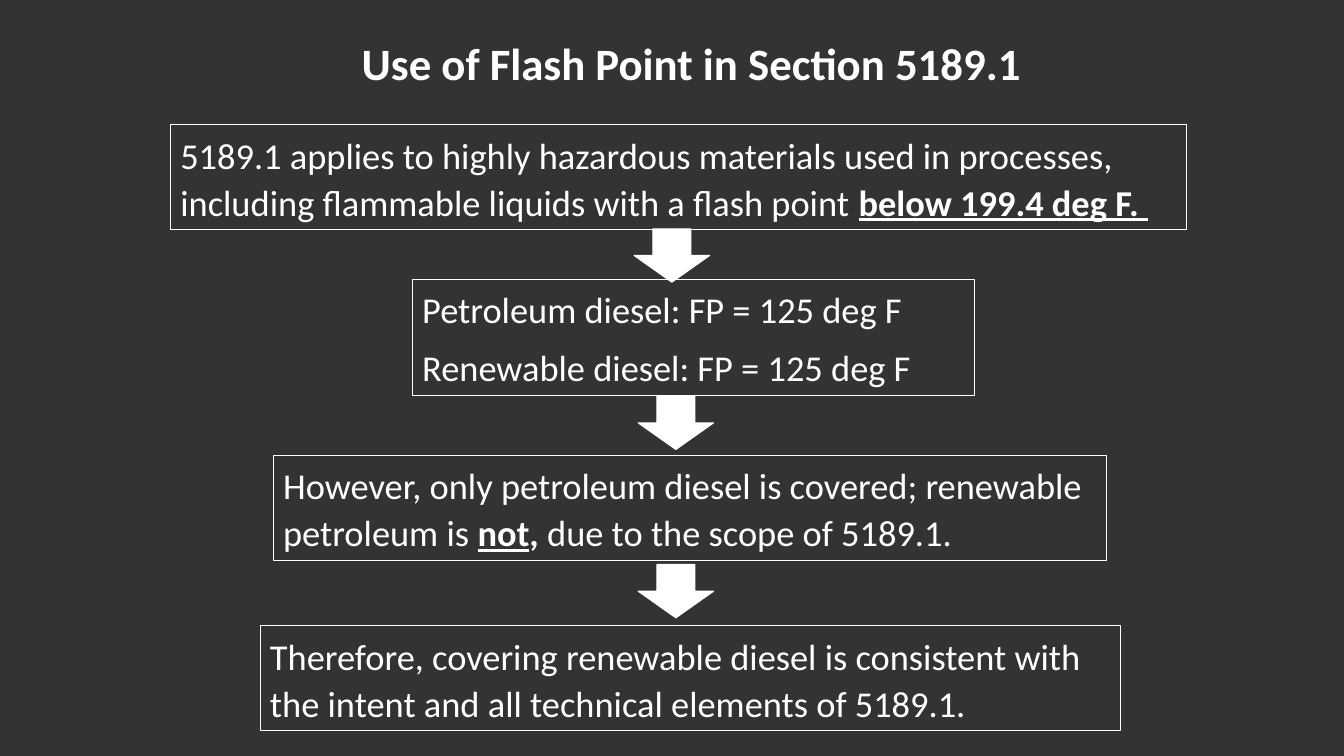
from pptx import Presentation
from pptx import util as u
from pptx.dml.color import RGBColor
from pptx.enum import shapes, text

COLS, ROWS = 160, 90
PLAIN, BOLD, KEY = (False, False), (True, False), (True, True)  # (bold, underline)


def rgb(value):
    return RGBColor.from_string(value)


class FlowSlide:
    font, ink, ground = "Calibri", "FFFFFF", "333333"
    title_size, body_size, line_width = 32, 26, 0.75

    def __init__(self, prs):
        self.col, self.row = prs.slide_width / COLS, prs.slide_height / ROWS
        self.s = prs.slides.add_slide(prs.slide_layouts[6])
        fill = self.s.background.fill
        fill.solid()
        fill.fore_color.rgb = rgb(self.ground)

    def place(self, left, top, width, height):
        return (round(left * self.col), round(top * self.row),
                round(width * self.col), round(height * self.row))

    def outline(self, sp):
        sp.line.color.rgb = rgb(self.ink)
        sp.line.width = u.Pt(self.line_width)

    def add_runs(self, p, runs, size):
        for wording, (bold, underline) in runs:
            r = p.add_run()
            r.text = wording
            r.font.name, r.font.size = self.font, u.Pt(size)
            r.font.color.rgb = rgb(self.ink)
            r.font.bold, r.font.underline = bold, underline

    def text_box(self, *at):
        sp = self.s.shapes.add_textbox(*self.place(*at))
        tf = sp.text_frame
        tf.word_wrap = True
        tf.auto_size = text.MSO_AUTO_SIZE.SHAPE_TO_FIT_TEXT
        return sp

    def title(self, wording, *at):
        sp = self.text_box(*at)
        self.add_runs(sp.text_frame.paragraphs[0], [(wording, BOLD)], self.title_size)

    def step(self, paragraphs, *at):
        sp = self.text_box(*at)
        self.outline(sp)
        tf = sp.text_frame
        for i, runs in enumerate(paragraphs):
            p = tf.add_paragraph() if i else tf.paragraphs[0]
            p.line_spacing, p.space_after = 1.07, u.Pt(8)
            self.add_runs(p, runs, self.body_size)

    def arrow(self, left, top, width=9, height=6.36):
        sp = self.s.shapes.add_shape(shapes.MSO_SHAPE.DOWN_ARROW,
                                     *self.place(left, top, width, height))
        sp.shadow.inherit = False
        sp.fill.solid()
        sp.fill.fore_color.rgb = rgb(self.ink)
        self.outline(sp)


def main():
    prs = Presentation()
    prs.slide_width, prs.slide_height = u.Inches(13.33), u.Inches(7.5)
    flow = FlowSlide(prs)

    # Title
    flow.title("Use of Flash Point in Section 5189.1", 41.88, 3.72, 86.52, 7.68)

    # Steps of the argument
    flow.step([[("5189.1 applies to highly hazardous materials used in processes, "
                 "including flammable liquids with a flash point ", PLAIN),
                ("below 199.4 deg F. ", KEY)]],
              20.28, 14.88, 120.96, 12.48)
    flow.step([[(f"{fuel} diesel: FP = 125 deg F", PLAIN)]
               for fuel in ("Petroleum", "Renewable")],
              49.08, 33.24, 66.96, 13.8)
    flow.step([[("However, only petroleum diesel is covered; renewable petroleum is ", PLAIN),
                ("not", KEY), (", ", BOLD),
                ("due to the scope of 5189.1.", PLAIN)]],
              32.52, 54.24, 99.24, 12.48)
    flow.step([[("Therefore, covering renewable diesel is consistent with the intent "
                 "and all technical elements of 5189.1.", PLAIN)]],
              30.96, 74.52, 102.48, 12.48)

    # Arrows between the steps
    for left, top in ((75.48, 27.24), (75.96, 47.16), (75.96, 67.2)):
        flow.arrow(left, top)

    prs.save("out.pptx")


if __name__ == "__main__":
    main()
